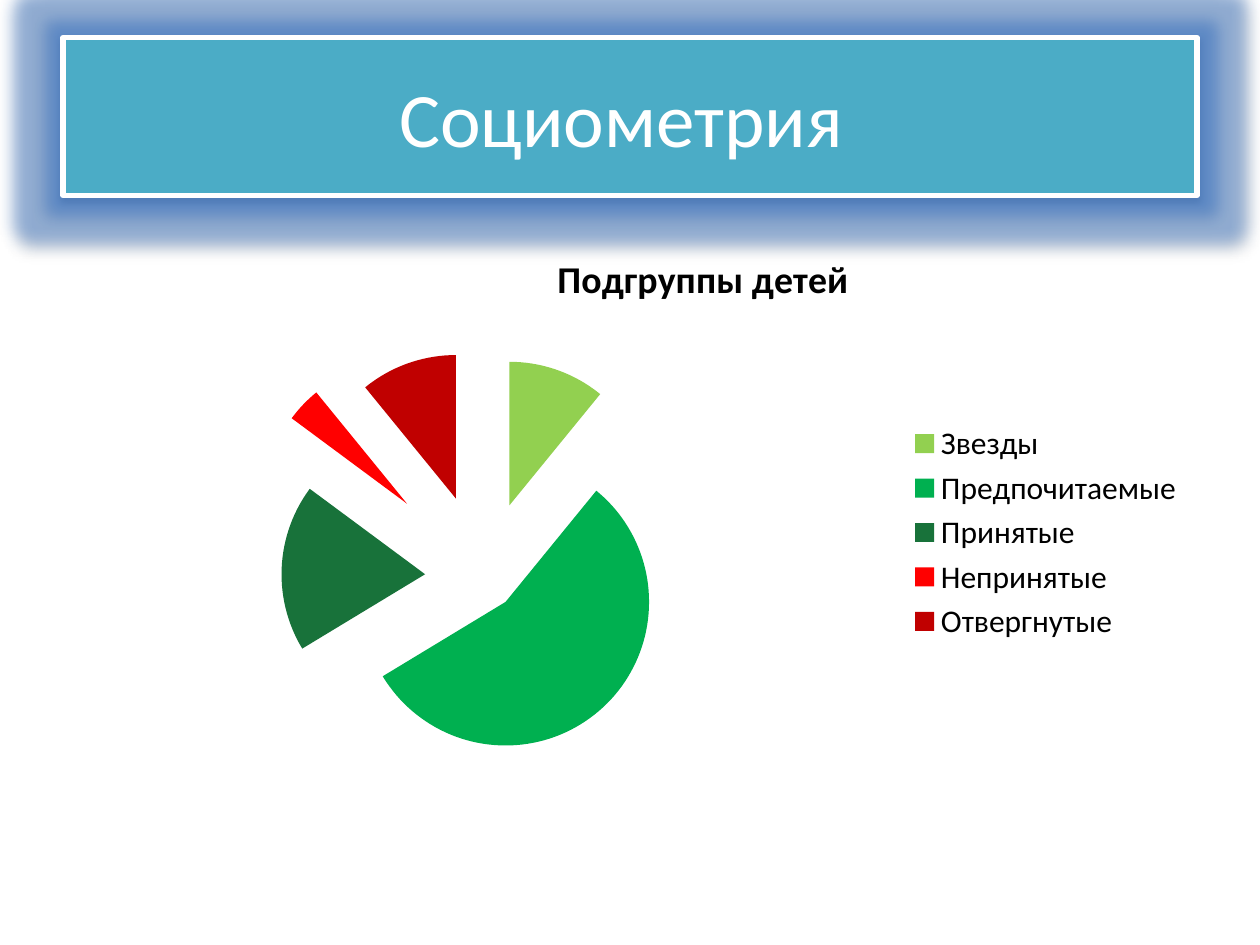
import pptx
import pptx.chart.data
import pptx.dml.color
import pptx.enum.chart
import pptx.enum.shapes
import pptx.enum.text
import pptx.oxml
import pptx.oxml.ns
import pptx.util

Cm = pptx.util.Cm
Pt = pptx.util.Pt
RGB = pptx.dml.color.RGBColor

WHITE = RGB(0xFF, 0xFF, 0xFF)
BLACK = RGB(0, 0, 0)
TEAL = RGB(0x4B, 0xAC, 0xC6)
GLOW = RGB(0x27, 0x6B, 0xC8)
FONT = "Calibri"

HEADING = "Социометрия "
CHART_TITLE = "Подгруппы детей"
# Subgroup, share in percent, colour, distance from the pie centre
SUBGROUPS = [
    ("Звезды", 11, RGB(0x92, 0xD0, 0x50), 53),
    ("Предпочитаемые", 56, RGB(0x00, 0xB0, 0x50), 23),
    ("Принятые", 19, RGB(0x18, 0x72, 0x3A), 41),
    ("Непринятые", 4, RGB(0xFF, 0x00, 0x00), 74),
    ("Отвергнутые", 11, RGB(0xC0, 0x00, 0x00), 58),
]
LEFT, WIDTH = Cm(1.27), Cm(22.86)


def style_font(font, **values):
    for name, value in values.items():
        if name == "color":
            font.color.rgb = value
        else:
            setattr(font, name, value)


def add_heading(slide):
    heading = slide.shapes.add_shape(
        pptx.enum.shapes.MSO_SHAPE.RECTANGLE, LEFT, Cm(0.76), WIDTH, Cm(3.18))
    heading.fill.solid()
    heading.fill.fore_color.rgb = TEAL
    heading.line.color.rgb = WHITE
    heading.line.width = Pt(3)

    # Blue glow and soft shadow below
    heading.shadow.inherit = False
    effects = heading.element.spPr.find(pptx.oxml.ns.qn("a:effectLst"))
    ns = pptx.oxml.ns.nsdecls("a")
    for effect, color, alpha in (
        (f'glow {ns} rad="{Pt(18)}"', GLOW, 40000),
        (f'outerShdw {ns} blurRad="{Pt(3.1)}" dist="{Pt(1.6)}" '
         'dir="5400000" rotWithShape="0"', BLACK, 38000),
    ):
        effects.append(pptx.oxml.parse_xml(
            f'<a:{effect}><a:srgbClr val="{color}"><a:alpha val="{alpha}"/>'
            f'</a:srgbClr></a:{effect.split()[0]}>'))

    frame = heading.text_frame
    frame.word_wrap = True
    frame.vertical_anchor = pptx.enum.text.MSO_ANCHOR.MIDDLE
    paragraph = frame.paragraphs[0]
    paragraph.alignment = pptx.enum.text.PP_ALIGN.CENTER
    run = paragraph.add_run()
    run.text = HEADING
    style_font(run.font, name=FONT, size=Pt(44), color=WHITE)


def add_subgroup_chart(slide):
    data = pptx.chart.data.CategoryChartData()
    data.categories = [group[0] for group in SUBGROUPS]
    data.add_series(CHART_TITLE, [group[1] for group in SUBGROUPS])
    chart = slide.shapes.add_chart(
        pptx.enum.chart.XL_CHART_TYPE.PIE,
        LEFT, Cm(4.45), WIDTH, Cm(12.57), data).chart
    style_font(chart.font, name=FONT, size=Pt(18), color=BLACK)

    # Title, moved right of the centre
    chart.has_title = True
    title = chart.chart_title
    title.include_in_layout = False
    run = title.text_frame.paragraphs[0].add_run()
    run.text = CHART_TITLE
    style_font(run.font, name=FONT, size=Pt(21.6), bold=True, color=BLACK)
    c_ns = pptx.oxml.ns.nsdecls("c")
    for old in title._element.findall(pptx.oxml.ns.qn("c:layout")):
        title._element.remove(old)
    title._element.find(pptx.oxml.ns.qn("c:tx")).addnext(pptx.oxml.parse_xml(
        f'<c:layout {c_ns}><c:manualLayout><c:xMode val="edge"/>'
        '<c:yMode val="edge"/><c:x val="0.43"/><c:y val="0.04"/>'
        '</c:manualLayout></c:layout>'))

    chart.has_legend = True
    chart.legend.position = pptx.enum.chart.XL_LEGEND_POSITION.RIGHT
    chart.legend.include_in_layout = False

    # Slices: own colour, each pulled out by its own distance
    pie = chart.plots[0]
    pie.vary_by_categories = True
    for index, (_, _, color, distance) in enumerate(SUBGROUPS):
        point = pie.series[0].points[index]
        point.format.fill.solid()
        point.format.fill.fore_color.rgb = color
        slice_xml = pie.series[0]._element.findall(pptx.oxml.ns.qn("c:dPt"))[index]
        slice_xml.find(pptx.oxml.ns.qn("c:spPr")).addprevious(
            pptx.oxml.parse_xml(f'<c:explosion {c_ns} val="{distance}"/>'))


def main():
    deck = pptx.Presentation()
    deck.slide_width, deck.slide_height = Cm(25.4), Cm(19.05)
    slide = deck.slides.add_slide(deck.slide_layouts[6])
    add_heading(slide)
    add_subgroup_chart(slide)
    deck.save("out.pptx")


if __name__ == "__main__":
    main()
